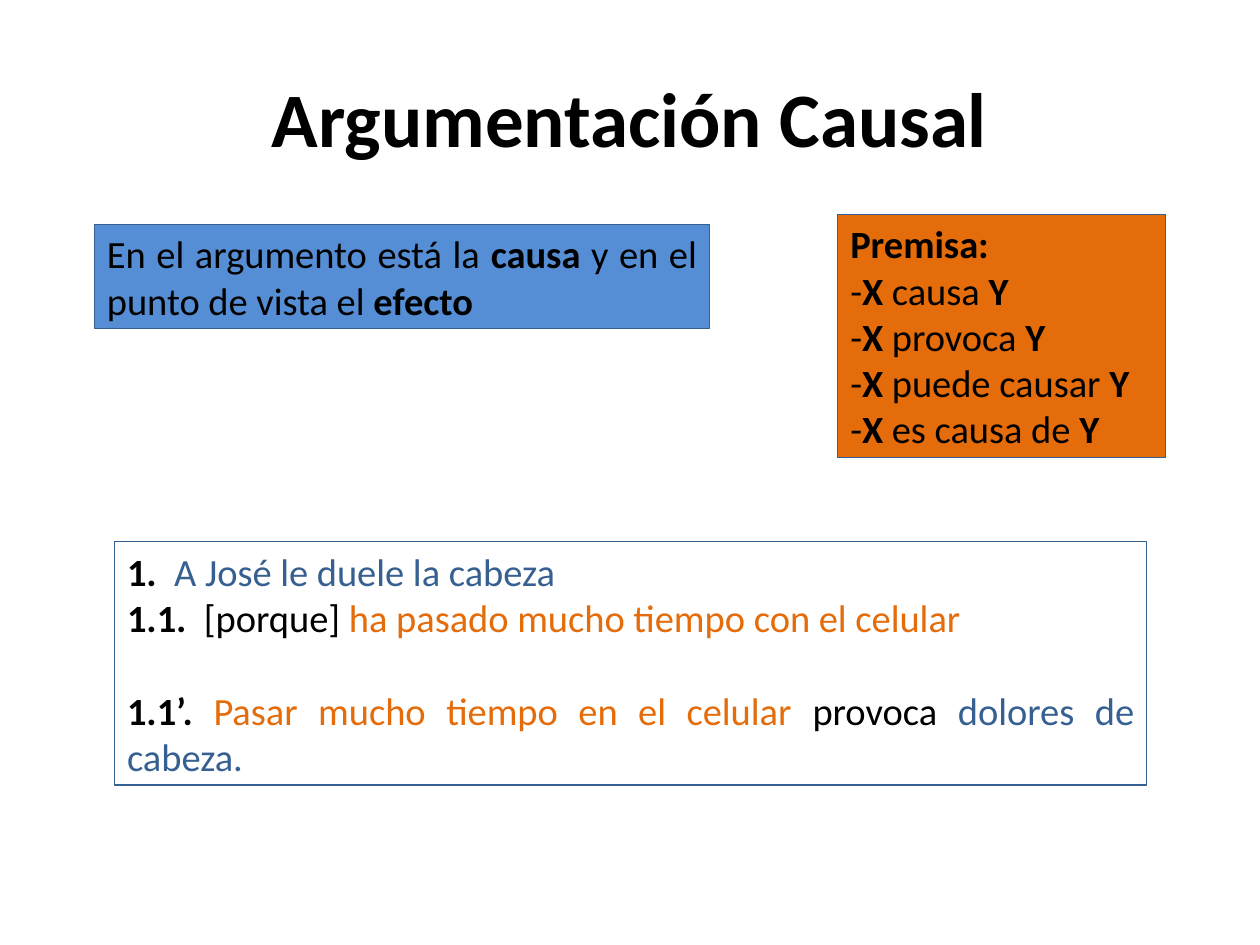
from pptx import Presentation
from pptx.dml.color import RGBColor
from pptx.enum.shapes import MSO_SHAPE as Shape
from pptx.enum.text import MSO_ANCHOR as Anchor, MSO_AUTO_SIZE as AutoSize, PP_ALIGN as Align
from pptx.util import Inches, Pt

BLACK, WHITE = "000000", "FFFFFF"
BLUE, LIGHT_BLUE, ORANGE = "376092", "558ED5", "E46C0A"


def rgb(hex_color):
    return RGBColor.from_string(hex_color)


class SlideBuilder:
    font = "Calibri"
    title_size = 44
    body_size = 22
    line_height = 1.22

    def __init__(self, slide):
        self.slide = slide

    def add_run(self, paragraph, text, size, bold=False, color=BLACK):
        run = paragraph.add_run()
        run.text = text
        run.font.name = self.font
        run.font.size = Pt(size)
        run.font.bold = bold
        run.font.color.rgb = rgb(color)

    def title(self, text, left, top, width, height):
        title = self.slide.shapes.title
        title.left, title.top = Inches(left), Inches(top)
        title.width, title.height = Inches(width), Inches(height)
        title.text_frame.vertical_anchor = Anchor.MIDDLE
        paragraph = title.text_frame.paragraphs[0]
        paragraph.alignment = Align.CENTER
        self.add_run(paragraph, text, self.title_size, bold=True)

    def box(self, lines, left, top, width, height, fill, gap_before=()):
        """Draw a box; each line is a list of (text, bold, color) runs.

        The lines whose index is in gap_before follow a gap one line high.
        """
        box = self.slide.shapes.add_shape(
            Shape.RECTANGLE, Inches(left), Inches(top), Inches(width), Inches(height))
        box.shadow.inherit = False
        box.fill.solid()
        box.fill.fore_color.rgb = rgb(fill)
        box.line.color.rgb = rgb(BLUE)
        box.line.width = Pt(0.75)
        frame = box.text_frame
        frame.word_wrap = True
        frame.auto_size = AutoSize.SHAPE_TO_FIT_TEXT
        frame.vertical_anchor = Anchor.TOP
        for index, runs in enumerate(lines):
            paragraph = frame.add_paragraph() if index else frame.paragraphs[0]
            paragraph.alignment = Align.JUSTIFY
            if index in gap_before:
                paragraph.space_before = Pt(self.body_size * self.line_height)
            for text, bold, color in runs:
                self.add_run(paragraph, text, self.body_size, bold, color)


def main():
    deck = Presentation()
    deck.slide_width, deck.slide_height = Inches(10), Inches(7.5)
    builder = SlideBuilder(deck.slides.add_slide(deck.slide_layouts[5]))

    builder.title("Argumentación Causal", 0.5, 0.3, 9, 1.25)

    definition = [[
        ("En el argumento está la ", False, BLACK),
        ("causa", True, BLACK),
        (" y en el punto de vista el ", False, BLACK),
        ("efecto", True, BLACK),
    ]]
    builder.box(definition, 0.75, 1.78, 4.88, 0.83, LIGHT_BLUE)

    causal_verbs = ["causa", "provoca", "puede causar", "es causa de"]
    premise = [[("Premisa:", True, BLACK)]] + [
        [("-", False, BLACK), ("X", True, BLACK),
         (f" {verb} ", False, BLACK), ("Y", True, BLACK)]
        for verb in causal_verbs
    ]
    builder.box(premise, 6.65, 1.7, 2.6, 1.93, ORANGE)

    example = [
        [("1.  ", True, BLACK), ("A José le duele la cabeza", False, BLUE)],
        [("1.1.  ", True, BLACK), ("[porque] ", False, BLACK),
         ("ha pasado mucho tiempo con el celular", False, ORANGE)],
        [("1.1’. ", True, BLACK),
         ("Pasar mucho tiempo en el celular", False, ORANGE),
         (" provoca ", False, BLACK),
         ("dolores de cabeza.", False, BLUE)],
    ]
    builder.box(example, 0.91, 4.3, 8.19, 1.93, WHITE, gap_before={2})

    deck.save("out.pptx")


if __name__ == "__main__":
    main()
